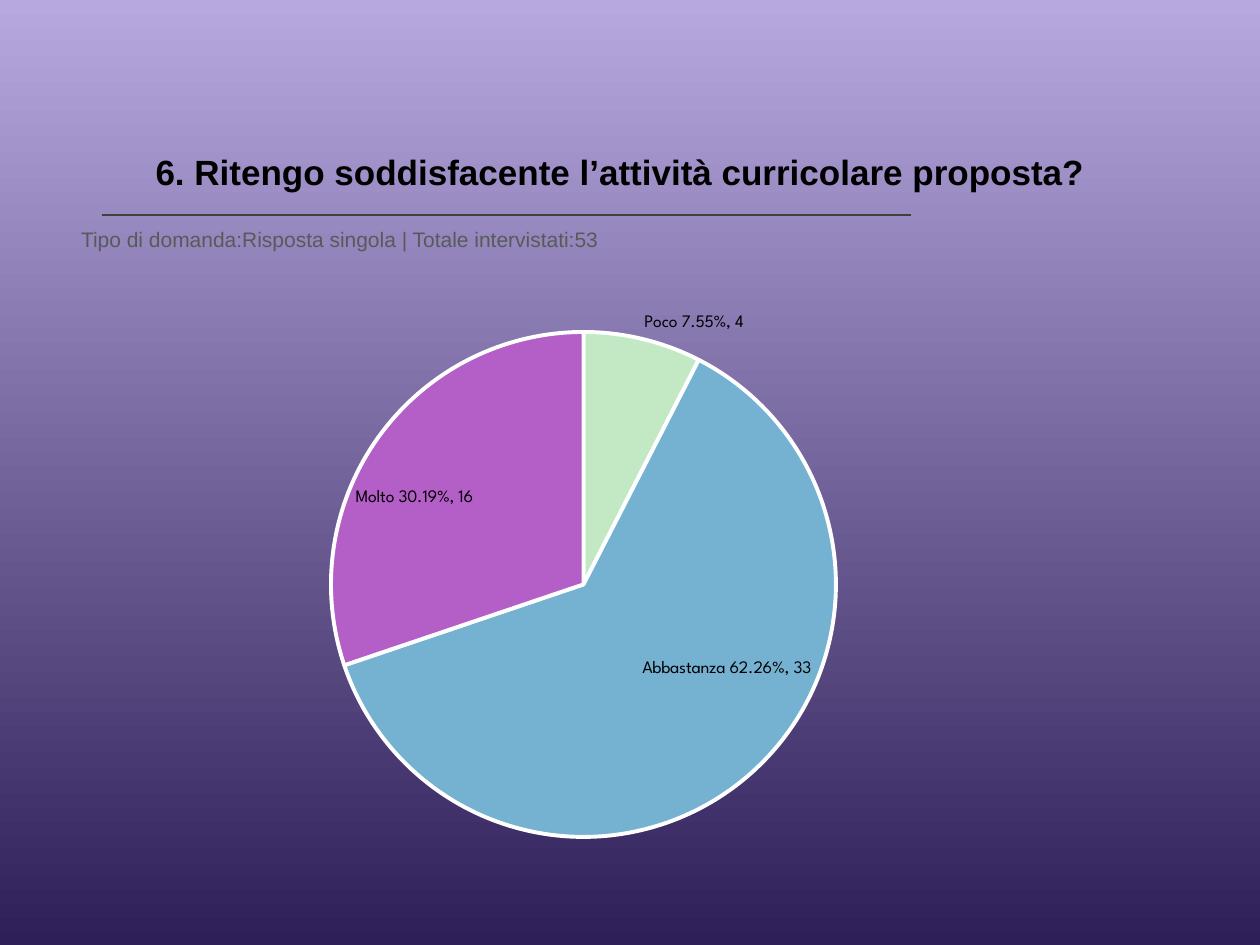
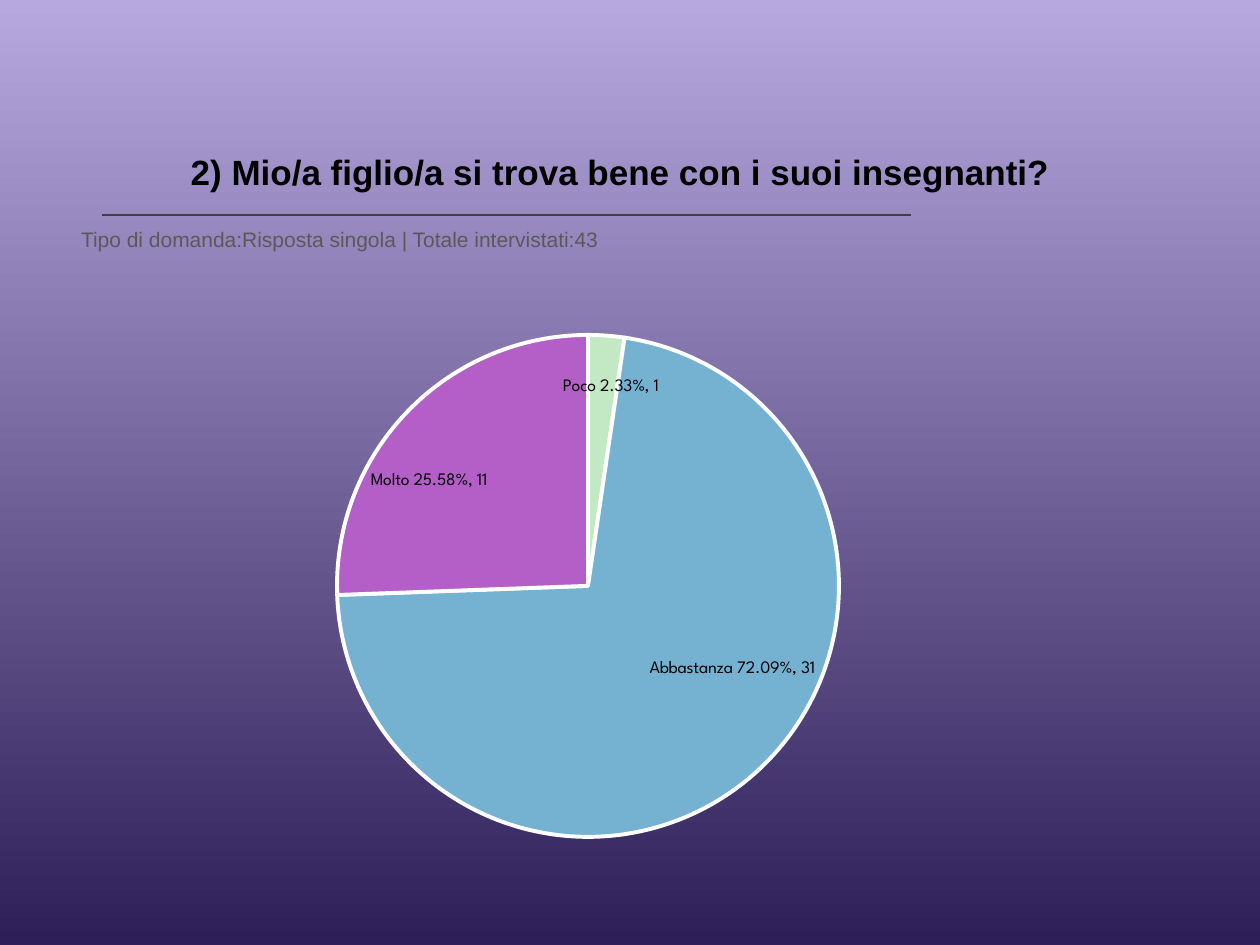
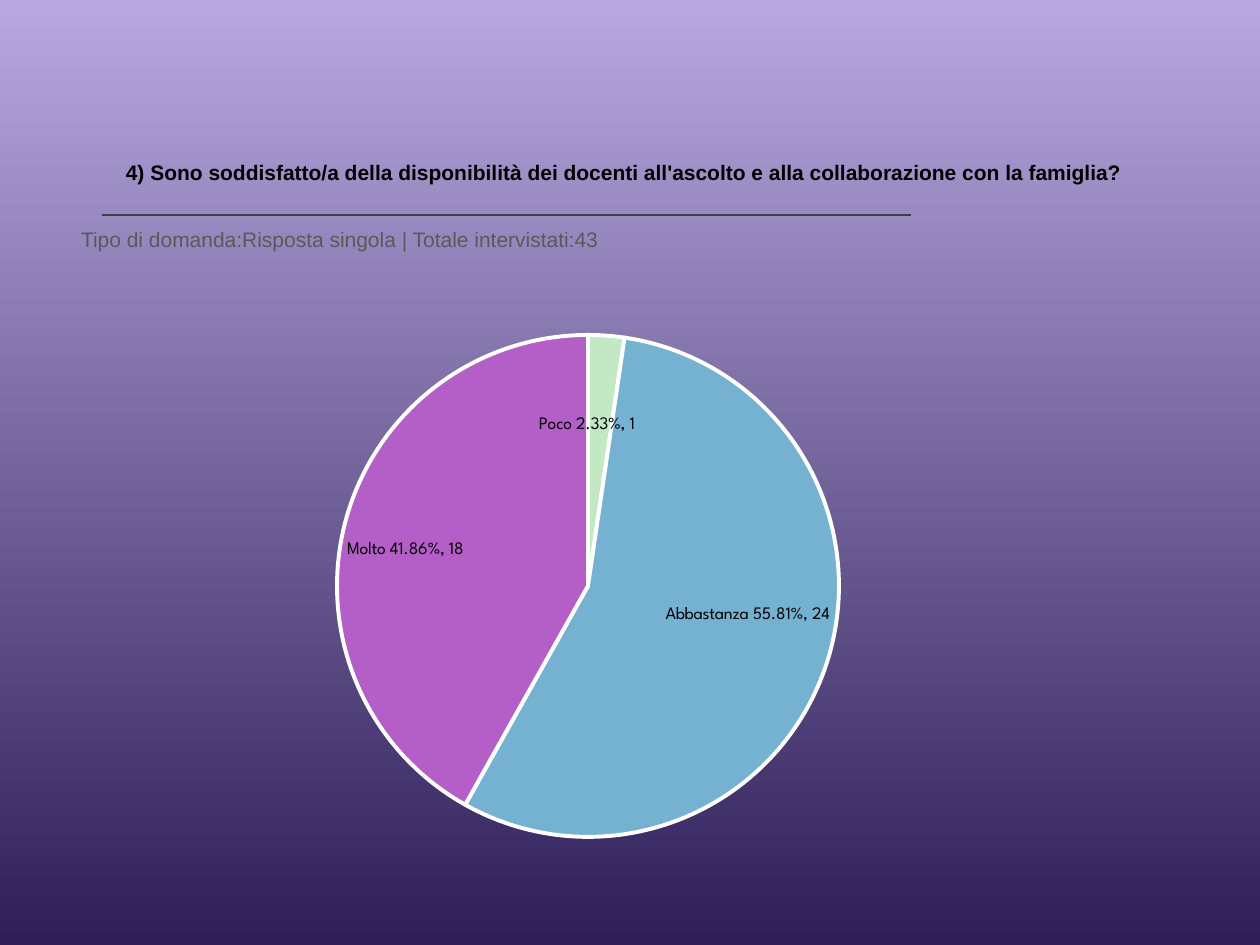
from dataclasses import dataclass

from lxml import etree
from pptx import Presentation
from pptx.chart.data import CategoryChartData
from pptx.dml.color import RGBColor
from pptx.enum.chart import XL_CHART_TYPE as ChartType, XL_LABEL_POSITION as LabelPos
from pptx.enum.shapes import MSO_CONNECTOR as Connector
from pptx.enum.text import MSO_ANCHOR as Anchor, MSO_AUTO_SIZE as AutoSize, PP_ALIGN as Align
from pptx.oxml.ns import qn
from pptx.util import Emu, Pt

ANSWERS = ["Per niente", "Poco", "Abbastanza", "Molto"]
PERCENT = "0.##%"

# pie: left, top and diameter in px; moved: answer -> label shift in px
QUESTIONS = [
    dict(title="6. Ritengo soddisfacente l’attività curricolare proposta?",
         size=20, total=53, counts=[0, 4, 33, 16],
         percents=[0, 7.55, 62.26, 30.19], pie=(331, 332, 505), moved={}),
    dict(title="2) Mio/a figlio/a si trova bene con i suoi insegnanti?",
         size=20, total=43, counts=[0, 1, 31, 11],
         percents=[0, 2.33, 72.09, 25.58], pie=(337, 335, 502),
         moved={"Poco": (4, 67)}),
    dict(title="4) Sono soddisfatto/a della disponibilità dei docenti all'ascolto "
               "e alla collaborazione con la famiglia?",
         size=12, total=43, counts=[0, 1, 24, 18],
         percents=[0, 2.33, 55.81, 41.86], pie=(337, 335, 502),
         moved={"Poco": (-20, 105)}),
]


@dataclass(frozen=True)
class Theme:
    top: str = "B7A9E0"
    bottom: str = "2F1F58"
    rule: str = "404040"
    title: str = "000000"
    note: str = "595959"
    label: str = "000000"
    edge: str = "FFFFFF"
    slices: tuple = ("BACAD4", "C2E8C4", "75B2D2", "B45EC7")
    font: str = "Arial"
    chart_font: str = "League Spartan"
    note_size: int = 12
    label_size: int = 10
    chart_size: int = 18
    rule_width: float = 0.75
    edge_width: float = 2.25


THEME = Theme()
SLIDE = (1260, 945)
TITLE_BOX = (63, 137, 1134, 73)
NOTE_BOX = (63, 220, 1134, 53)
CHART_BOX = (168, 294, 840, 560)
RULE = (102, 215, 911, 215)


def px(n):
    return Emu(round(n * 914400 / 126))


def rgb(code):
    return RGBColor.from_string(code)


def place(sp, box):
    sp.left, sp.top, sp.width, sp.height = map(px, box)


def set_font(font, name, size, color, bold=False):
    font.name, font.size, font.bold = name, Pt(size), bold
    font.color.rgb = rgb(color)


def fill_placeholder(sp, box, text, size, color, bold=False):
    place(sp, box)
    tf = sp.text_frame
    tf.word_wrap = True
    tf.auto_size = AutoSize.NONE
    p = tf.paragraphs[0]
    r = p.add_run()
    r.text = text
    set_font(r.font, THEME.font, size, color, bold)
    return tf, p


def add_title(s, text, size):
    tf, p = fill_placeholder(s.shapes.title, TITLE_BOX, text, size, THEME.title, True)
    tf.vertical_anchor = Anchor.MIDDLE
    # The wider right inset sets the heading slightly left of centre.
    tf.margin_right = px(12 + size)
    p.alignment = Align.CENTER
    p.line_spacing = 0.95


def add_note(s, total):
    text = f"Tipo di domanda:Risposta singola | Totale intervistati:{total}"
    tf, p = fill_placeholder(s.placeholders[1], NOTE_BOX, text, THEME.note_size, THEME.note)
    tf.vertical_anchor = Anchor.TOP
    tf.margin_left = px(18)
    pPr = p._p.get_or_add_pPr()
    pPr.set("marL", "0")
    pPr.set("indent", "0")
    etree.SubElement(pPr, qn("a:buNone"))
    p.space_before = Pt(0)


def manual_layout(**values):
    layout = etree.Element(qn("c:layout"))
    manual = etree.SubElement(layout, qn("c:manualLayout"))
    for tag, value in values.items():
        etree.SubElement(manual, qn(f"c:{tag}")).set("val", str(value))
    return layout


def set_plot_area(chart, pie):
    left, top, size = pie
    x, y, w, h = CHART_BOX
    area = chart._chartSpace.find(".//" + qn("c:plotArea"))
    for old in area.findall(qn("c:layout")):
        area.remove(old)
    area.insert(0, manual_layout(
        layoutTarget="inner", xMode="edge", yMode="edge",
        x=round((left - x) / w, 4), y=round((top - y) / h, 4),
        w=round(size / w, 4), h=round(size / h, 4)))


def label_series(series):
    labels = series.data_labels
    labels.show_value = labels.show_category_name = True
    labels.number_format = PERCENT
    labels.number_format_is_linked = False
    labels.position = LabelPos.BEST_FIT
    set_font(labels.font, THEME.chart_font, THEME.label_size, THEME.label)


def label_slice(point, text, shift):
    label = point.data_label
    tf = label.text_frame
    tf.word_wrap = False
    r = tf.paragraphs[0].add_run()
    r.text = text
    set_font(r.font, THEME.chart_font, THEME.label_size, THEME.label)
    label.position = LabelPos.BEST_FIT
    if shift:
        dx, dy = shift
        label._get_or_add_dLbl().insert(1, manual_layout(
            x=round(dx / CHART_BOX[2], 4), y=round(dy / CHART_BOX[3], 4)))


def add_pie(s, question):
    data = CategoryChartData(number_format=PERCENT)
    data.categories = ANSWERS
    data.add_series("Series 1", [round(v / 100, 4) for v in question["percents"]])
    chart = s.shapes.add_chart(ChartType.PIE, *map(px, CHART_BOX), data).chart
    chart.has_title = chart.has_legend = False
    set_font(chart.font, THEME.chart_font, THEME.chart_size, THEME.label)
    set_plot_area(chart, question["pie"])
    plot = chart.plots[0]
    plot.vary_by_categories = True
    series = plot.series[0]
    label_series(series)
    rows = zip(ANSWERS, question["percents"], question["counts"], THEME.slices)
    for i, (answer, percent, count, color) in enumerate(rows):
        point = series.points[i]
        point.format.fill.solid()
        point.format.fill.fore_color.rgb = rgb(color)
        point.format.line.color.rgb = rgb(THEME.edge)
        point.format.line.width = Pt(THEME.edge_width)
        label_slice(point, f"{answer} {percent}%, {count}", question["moved"].get(answer))


def style_master(prs, s):
    """Put the gradient and the title rule on the master; s only creates the rule."""
    master = prs.slide_master
    fill = master.background.fill
    fill.gradient()
    fill.gradient_angle = 270
    for stop, color in zip(fill.gradient_stops, (THEME.top, THEME.bottom)):
        stop.color.rgb = rgb(color)
    rule = s.shapes.add_connector(Connector.STRAIGHT, *map(px, RULE))
    rule.line.color.rgb = rgb(THEME.rule)
    rule.line.width = Pt(THEME.rule_width)
    etree.SubElement(rule._element.spPr, qn("a:effectLst"))
    master.shapes.element.append(rule._element)


def main():
    prs = Presentation()
    prs.slide_width, prs.slide_height = map(px, SLIDE)
    for question in QUESTIONS:
        s = prs.slides.add_slide(prs.slide_layouts[1])
        add_title(s, question["title"], question["size"])
        add_note(s, question["total"])
        add_pie(s, question)
    style_master(prs, prs.slides[0])
    prs.save("out.pptx")


if __name__ == "__main__":
    main()
